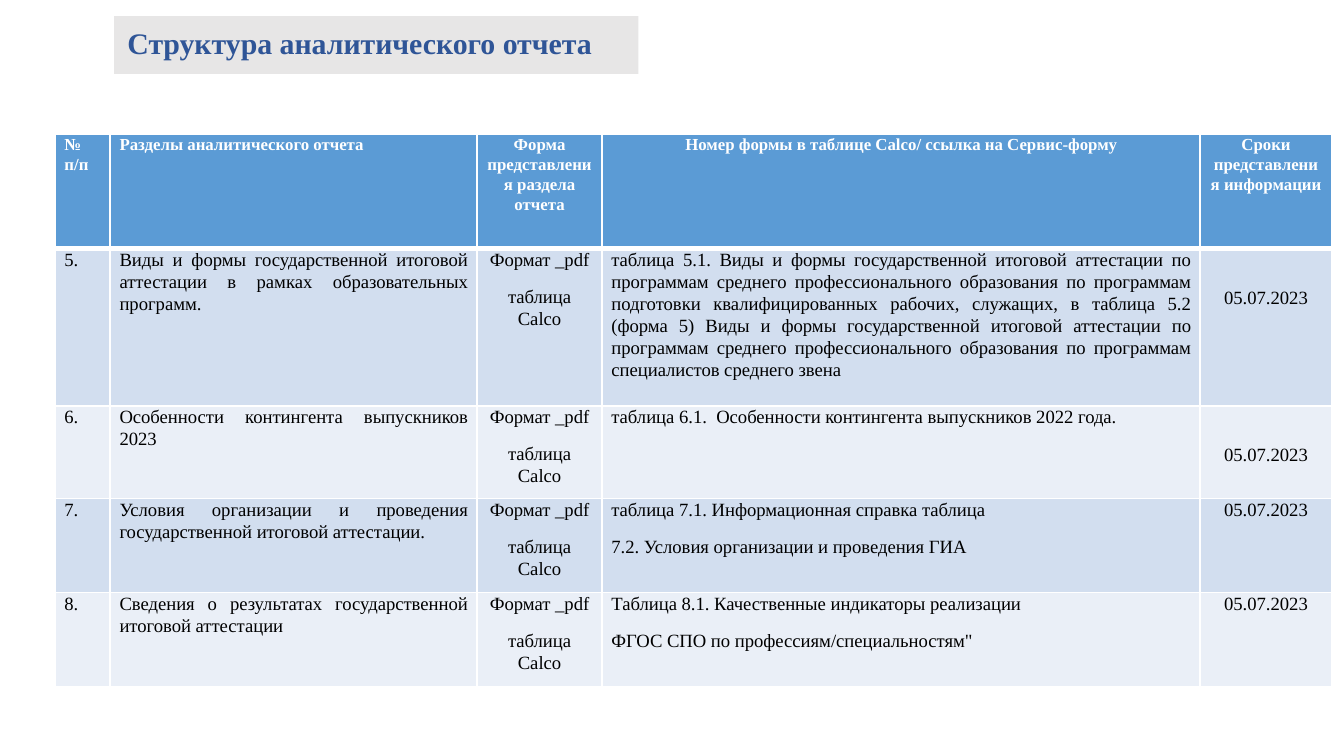
"""Build the slide with the structure of the analytical report."""
from lxml.etree import SubElement
from pptx import Presentation
from pptx.dml.color import RGBColor
from pptx.enum.shapes import MSO_SHAPE as SHAPE
from pptx.enum.text import MSO_ANCHOR as ANCHOR, PP_ALIGN as ALIGN
from pptx.oxml.ns import qn
from pptx.util import Inches, Pt

TITLE = "Структура аналитического отчета"
HEADER = [
    "№ п/п",
    "Разделы аналитического отчета",
    "Форма представления раздела отчета",
    "Номер формы в таблице Calco/ ссылка на Сервис-форму",
    "Сроки представления информации",
]
FORMAT = ["Формат _pdf", "таблица Calco"]
DATE = "05.07.2023"
SECTIONS = [
    ("5.", "Виды и формы государственной итоговой аттестации в рамках образовательных программ.",
     ["таблица 5.1. Виды и формы государственной итоговой аттестации по программам среднего "
      "профессионального образования по программам подготовки квалифицированных рабочих, служащих, "
      "в таблица 5.2 (форма 5) Виды и формы государственной итоговой аттестации по программам "
      "среднего профессионального образования по программам специалистов среднего звена"]),
    ("6.", "Особенности контингента выпускников 2023",
     ["таблица 6.1.  Особенности контингента выпускников 2022 года."]),
    ("7.", "Условия организации и проведения государственной итоговой аттестации.",
     ["таблица 7.1. Информационная справка таблица",
      "7.2. Условия организации и проведения ГИА"]),
    ("8.", "Сведения о результатах государственной итоговой аттестации",
     ["Таблица 8.1. Качественные индикаторы реализации",
      "ФГОС СПО по профессиям/специальностям\""]),
]
COL_WIDTHS = [0.41, 2.73, 0.93, 4.45, 0.98]
ROW_HEIGHTS = [0.85, 1.17, 0.69, 0.7, 0.7]
HEAD_ALIGN = [ALIGN.LEFT, ALIGN.JUSTIFY, ALIGN.CENTER, ALIGN.CENTER, ALIGN.CENTER]
BODY_ALIGN = [ALIGN.LEFT, ALIGN.JUSTIFY, ALIGN.CENTER, ALIGN.JUSTIFY, ALIGN.CENTER]
BANDS = ["EAEFF7", "D2DEEF"]
LOWERED_DATES = {1, 2}


def rgb(color):
    """Turn a hex string into a colour."""
    return RGBColor.from_string(color)


def write(tf, lines, size=10, color="000000", bold=False, align=ALIGN.LEFT, spacing=1.07, after=8):
    """Write one paragraph per line into a text frame."""
    tf.word_wrap = True
    for i, line in enumerate(lines):
        p = tf.paragraphs[0] if i == 0 else tf.add_paragraph()
        p.alignment, p.line_spacing, p.space_after = align, spacing, Pt(after)
        r = p.add_run()
        r.text = line
        r.font.name, r.font.size, r.font.bold = "Times New Roman", Pt(size), bold
        r.font.color.rgb = rgb(color)


def set_borders(cell, bottom):
    """Give a cell white borders with its own bottom width in points."""
    props = cell._tc.get_or_add_tcPr()
    for side, width in (("L", 1), ("R", 1), ("T", 1), ("B", bottom)):
        line = SubElement(props, qn(f"a:ln{side}"), w=str(Pt(width)))
        SubElement(SubElement(line, qn("a:solidFill")), qn("a:srgbClr"), val="FFFFFF")


def add_title(s):
    """Add the title bar."""
    sp = s.shapes.add_shape(SHAPE.RECTANGLE, Inches(0.85), Inches(0.12), Inches(3.9), Inches(0.43))
    sp.shadow.inherit = False
    sp.fill.solid()
    sp.fill.fore_color.rgb = rgb("E7E6E6")
    sp.line.fill.background()
    sp.text_frame.vertical_anchor = ANCHOR.MIDDLE
    write(sp.text_frame, [TITLE], size=16, color="2F5597", bold=True, spacing=0.9, after=0)


def add_report_table(s):
    """Add the table of report sections."""
    rows = [[[text] for text in HEADER]]
    rows += [[[number], [name], FORMAT, forms, [DATE]] for number, name, forms in SECTIONS]
    table = s.shapes.add_table(len(rows), len(HEADER), Inches(0.41), Inches(1),
                               Inches(sum(COL_WIDTHS)), Inches(sum(ROW_HEIGHTS))).table
    for column, width in zip(table.columns, COL_WIDTHS):
        column.width = Inches(width)
    for i, (row, height) in enumerate(zip(rows, ROW_HEIGHTS)):
        table.rows[i].height = Inches(height)
        head = i == 0
        for j, lines in enumerate(row):
            cell = table.cell(i, j)
            lowered = i in LOWERED_DATES and j == len(row) - 1
            cell.margin_left = cell.margin_right = Inches(0.07)
            cell.margin_top, cell.margin_bottom = Inches(0.28 if lowered else 0), 0
            set_borders(cell, bottom=3 if head else 1)
            cell.fill.solid()
            cell.fill.fore_color.rgb = rgb("5B9BD5" if head else BANDS[i % 2])
            if head:
                write(cell.text_frame, lines, size=9, color="FFFFFF", bold=True, align=HEAD_ALIGN[j])
            else:
                write(cell.text_frame, lines, align=BODY_ALIGN[j])


def main():
    """Build and save the presentation."""
    prs = Presentation()
    prs.slide_width = Inches(10)
    prs.slide_height = prs.slide_width * 9 // 16
    s = prs.slides.add_slide(prs.slide_layouts[6])
    add_title(s)
    add_report_table(s)
    prs.save("out.pptx")


if __name__ == "__main__":
    main()
